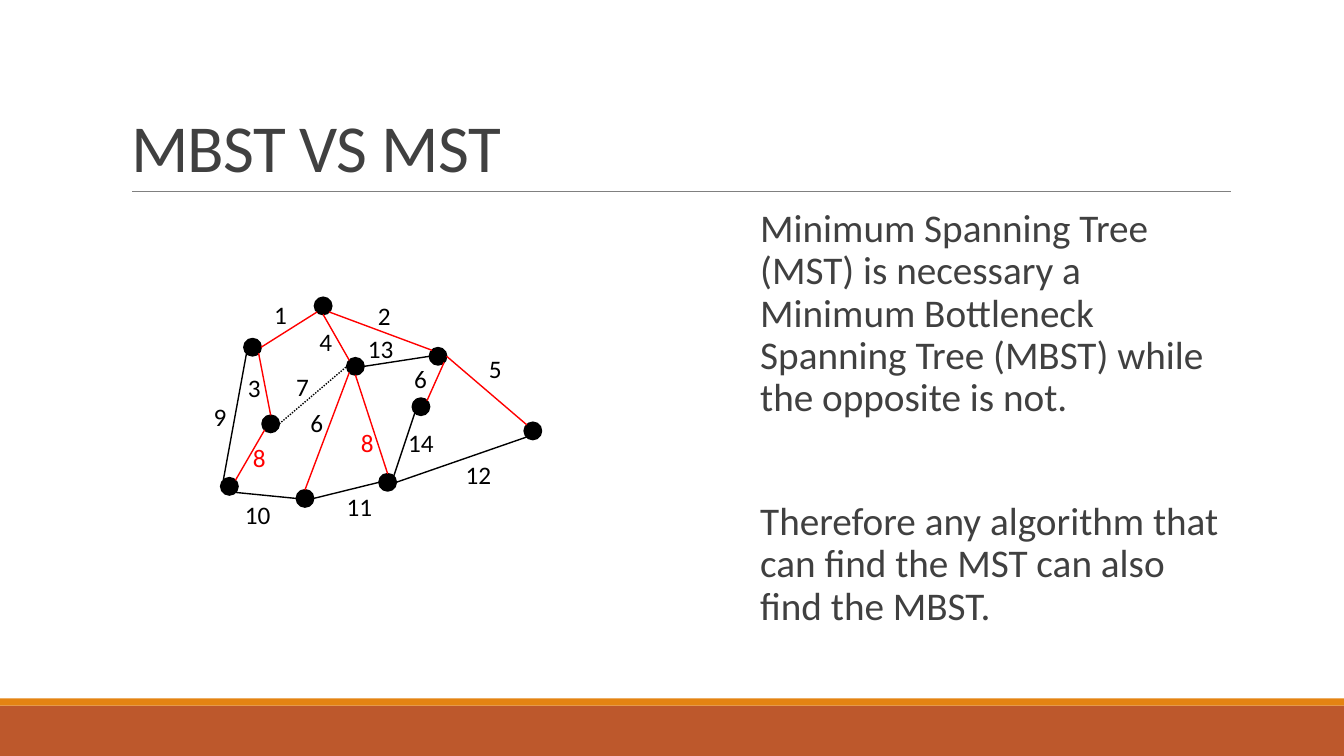
from math import hypot

from lxml.etree import SubElement
from pptx import Presentation
from pptx.dml.color import RGBColor
from pptx.enum.dml import MSO_LINE
from pptx.enum.shapes import MSO_CONNECTOR as Connector, MSO_SHAPE as Shape
from pptx.enum.text import MSO_ANCHOR as Anchor, MSO_AUTO_SIZE as AutoSize, PP_ALIGN as Align
from pptx.oxml.ns import qn
from pptx.util import Inches, Pt

BLACK = RGBColor(0x00, 0x00, 0x00)
RED = RGBColor(0xFF, 0x00, 0x00)
DARK = RGBColor(0x40, 0x40, 0x40)
GRAY = RGBColor(0x80, 0x80, 0x80)
RUST = RGBColor(0xBD, 0x58, 0x2C)
ORANGE = RGBColor(0xE4, 0x83, 0x12)

FONT = "Calibri"
NODE_SIZE = 0.17
COMPASS = {"N": (0, -1), "NE": (1, -1), "E": (1, 0), "SE": (1, 1),
           "S": (0, 1), "SW": (-1, 1), "W": (-1, 0), "NW": (-1, -1)}

# Left and top of each node
NODES = {
    "A": (2.42, 3.36), "B": (3.12, 2.95), "C": (3.44, 3.55), "D": (2.6, 4.12),
    "E": (4.09, 3.95), "F": (2.94, 4.86), "G": (4.26, 3.45), "H": (2.19, 4.74),
    "I": (3.76, 4.7), "J": (5.2, 4.19),
}

# Start node and side, end node and side, weight, left and top of the weight
TREE_EDGES = [
    ("B", "SW", "A", "E", 1, 2.62, 2.92),
    ("B", "S", "C", "NW", 4, 3.07, 3.19),
    ("B", "SE", "G", "NW", 2, 3.65, 2.93),
    ("G", "SE", "E", "NE", 6, 4.01, 3.56),
    ("G", "E", "J", "NW", 5, 4.75, 3.46),
    ("C", "S", "I", "N", 8, 3.48, 4.19),
    ("A", "SE", "D", "N", 3, 2.36, 3.64),
    ("C", "SW", "F", "N", 6, 2.98, 3.99),
    ("D", "SW", "H", "NE", 8, 2.41, 4.34),
]
OTHER_EDGES = [
    ("D", "E", "C", "W", 7, 2.84, 3.63),
    ("H", "SE", "F", "W", 10, 2.33, 4.9),
    ("C", "E", "G", "W", 13, 3.55, 3.26),
    ("A", "SW", "H", "NW", 9, 2.02, 3.93),
    ("I", "E", "J", "SW", 12, 4.52, 4.51),
    ("E", "SW", "I", "NE", 14, 3.95, 4.19),
    ("F", "E", "I", "W", 11, 3.34, 4.83),
]
BOTTLENECK = 8


def rim_point(node, side):
    """Return the point on the node's circle that faces the compass side."""
    dx, dy = COMPASS[side]
    radius = NODE_SIZE / 2
    reach = radius / hypot(dx, dy)
    left, top = NODES[node]
    return left + radius + dx * reach, top + radius + dy * reach


def add_line(start, end, color, width):
    line = slide.shapes.add_connector(
        Connector.STRAIGHT, *[Inches(value) for value in (*start, *end)])
    line.line.color.rgb = color
    line.line.width = Pt(width)
    SubElement(line._element.spPr, qn("a:effectLst"))
    return line


prs = Presentation()
prs.slide_width = Inches(13.33)
prs.slide_height = Inches(7.5)
slide = prs.slides.add_slide(prs.slide_layouts[1])

# Footer bands and the rule under the title
for top, height, color in [(7, 0.5, RUST), (6.93, 0.07, ORANGE)]:
    band = slide.shapes.add_shape(
        Shape.RECTANGLE, 0, Inches(top), prs.slide_width, Inches(height))
    band.shadow.inherit = False
    band.fill.solid()
    band.fill.fore_color.rgb = color
    band.line.fill.background()
add_line((1.31, 1.9), (12.21, 1.9), GRAY, 0.5)

# Title
title = slide.shapes.title
title.left, title.top, title.width, title.height = [
    Inches(value) for value in (1.2, 0.31, 11, 1.59)]
title.text_frame.text = "MBST VS MST"
title.text_frame.vertical_anchor = Anchor.BOTTOM
heading = title.text_frame.paragraphs[0]
heading.alignment = Align.LEFT
heading.line_spacing = 0.85
heading_run = heading.runs[0]
for name, value in {"name": FONT, "size": Pt(48), "bold": False}.items():
    setattr(heading_run.font, name, value)
heading_run.font.color.rgb = DARK
heading_run._r.get_or_add_rPr().set("spc", "-50")

# Statements
body = slide.placeholders[1]
body.left, body.top, body.width, body.height = [
    Inches(value) for value in (7.44, 2.02, 4.76, 4.4)]
statements = body.text_frame
statements.margin_left = statements.margin_right = 0
statements.text = (
    "Minimum Spanning Tree (MST) is necessary a Minimum Bottleneck Spanning Tree (MBST) "
    "while the opposite is not.\n"
    "Therefore any algorithm that can find the MST can also find the MBST.")
for statement, space_before in zip(statements.paragraphs, (12, 56)):
    statement.line_spacing = 0.9
    statement.space_before = Pt(space_before)
    statement.space_after = Pt(2)
    properties = statement._p.get_or_add_pPr()
    properties.set("marL", str(Inches(0.1)))
    properties.set("indent", "0")
    SubElement(properties, qn("a:buNone"))
    font = statement.runs[0].font
    font.name, font.size = FONT, Pt(28)
    font.color.rgb = DARK

# Graph
for left, top in NODES.values():
    node = slide.shapes.add_shape(
        Shape.OVAL, Inches(left), Inches(top), Inches(NODE_SIZE), Inches(NODE_SIZE))
    node.shadow.inherit = False
    node.fill.solid()
    node.fill.fore_color.rgb = BLACK
    node.line.color.rgb = BLACK
    node.line.width = Pt(1.25)

for edges, edge_color in [(TREE_EDGES, RED), (OTHER_EDGES, BLACK)]:
    for start, start_side, end, end_side, weight, left, top in edges:
        edge = add_line(rim_point(start, start_side), rim_point(end, end_side), edge_color, 1)
        if (start, end) == ("D", "C"):
            edge.line.dash_style = MSO_LINE.ROUND_DOT

        label_width = 0.33 if weight < 10 else 0.46
        label = slide.shapes.add_textbox(
            Inches(left), Inches(top), Inches(label_width), Inches(0.4))
        frame = label.text_frame
        frame.word_wrap = False
        frame.auto_size = AutoSize.SHAPE_TO_FIT_TEXT
        frame.text = str(weight)
        font = frame.paragraphs[0].runs[0].font
        font.name, font.size = FONT, Pt(18)
        font.color.rgb = RED if weight == BOTTLENECK else BLACK

prs.save("out.pptx")
